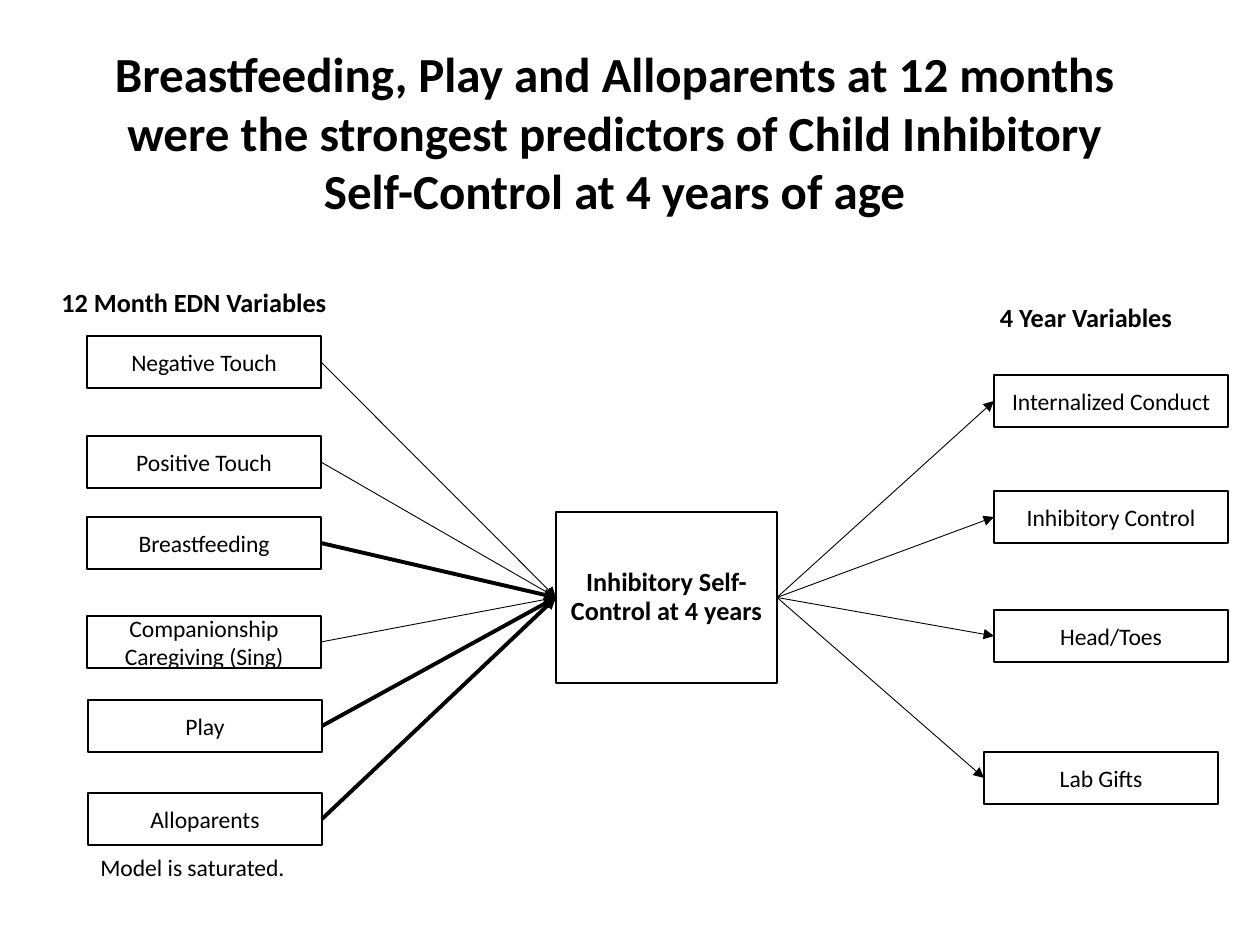
from pptx import Presentation
from pptx.dml.color import RGBColor
from pptx.enum.shapes import MSO_CONNECTOR as CONN, MSO_SHAPE as SHAPE
from pptx.enum.text import MSO_ANCHOR as ANCHOR, PP_ALIGN as ALIGN
from pptx.oxml.ns import qn
from pptx.util import Emu, Pt
from lxml.etree import SubElement

PX = 914400 / 126
COLORS = {"ink": "000000", "paper": "FFFFFF"}
LEFT, RIGHT = 1, 3  # connection sites of a rectangle
BOX_W, BOX_H = 234, 52
THIN, STRONG = 0.5, 2.25

# label, left, top, arrow weight
PREDICTORS = [
    ("Negative Touch", 87, 336, THIN),
    ("Positive Touch", 87, 436, THIN),
    ("Breastfeeding", 87, 517, STRONG),
    ("Companionship Caregiving (Sing)", 87, 616, THIN),
    ("Play", 88, 700, STRONG),
    ("Alloparents", 88, 793, STRONG),
]
OUTCOMES = [
    ("Internalized Conduct", 994, 375, THIN),
    ("Inhibitory Control", 994, 491, THIN),
    ("Head/Toes", 994, 610, THIN),
    ("Lab Gifts", 984, 752, THIN),
]


def px(n):
    return Emu(round(n * PX))


def color(name):
    return RGBColor.from_string(COLORS[name])


class Diagram:
    def __init__(self, s, font="Calibri"):
        self.s = s
        self.font = font

    def fill_text(self, sp, text, size, bold, align, spacing=None):
        tf = sp.text_frame
        tf.word_wrap = True
        p = tf.paragraphs[0]
        p.alignment = align
        p.line_spacing = spacing
        r = p.add_run()
        r.text = text
        r.font.name = self.font
        r.font.size = Pt(size)
        r.font.bold = bold
        r.font.color.rgb = color("ink")

    def text(self, text, x, y, w, h, size, bold=True, align=ALIGN.CENTER):
        sp = self.s.shapes.add_textbox(px(x), px(y), px(w), px(h))
        self.fill_text(sp, text, size, bold, align)

    def box(self, text, x, y, w=BOX_W, h=BOX_H, size=13.5, bold=False, spacing=None):
        sp = self.s.shapes.add_shape(SHAPE.RECTANGLE, px(x), px(y), px(w), px(h))
        sp.shadow.inherit = False
        sp.fill.solid()
        sp.fill.fore_color.rgb = color("paper")
        sp.line.color.rgb = color("ink")
        sp.line.width = Pt(1)
        sp.text_frame.vertical_anchor = ANCHOR.MIDDLE
        self.fill_text(sp, text, size, bold, ALIGN.CENTER, spacing)
        return sp

    def arrow(self, start, end, weight):
        """Join the right side of start to the left side of end."""
        cxn = self.s.shapes.add_connector(CONN.STRAIGHT, 0, 0, 0, 0)
        cxn.begin_connect(start, RIGHT)
        cxn.end_connect(end, LEFT)
        cxn.line.color.rgb = color("ink")
        cxn.line.width = Pt(weight)
        spPr = cxn._element.spPr
        SubElement(spPr.find(qn("a:ln")), qn("a:tailEnd"), type="triangle")
        SubElement(spPr, qn("a:effectLst"))


def main():
    prs = Presentation()
    prs.slide_width, prs.slide_height = px(1260), px(945)
    d = Diagram(prs.slides.add_slide(prs.slide_layouts[6]))

    d.text("Breastfeeding, Play and Alloparents at 12 months were the strongest "
           "predictors of Child Inhibitory Self-Control at 4 years of age",
           93, 37, 1043, 190, 28)
    d.text("12 Month EDN Variables", 46, 280, 296, 44, 15)
    d.text("4 Year Variables", 938, 295, 296, 44, 15)

    hub = d.box("Inhibitory Self-Control at 4 years", 556, 512, 221, 171,
                size=15, bold=True, spacing=0.9)
    for label, x, y, weight in PREDICTORS:
        d.arrow(d.box(label, x, y), hub, weight)
    for label, x, y, weight in OUTCOMES:
        d.arrow(hub, d.box(label, x, y), weight)

    d.text("Model is saturated.", 88, 847, 338, 42, 13.5, bold=False, align=ALIGN.LEFT)
    prs.save("out.pptx")


if __name__ == "__main__":
    main()
